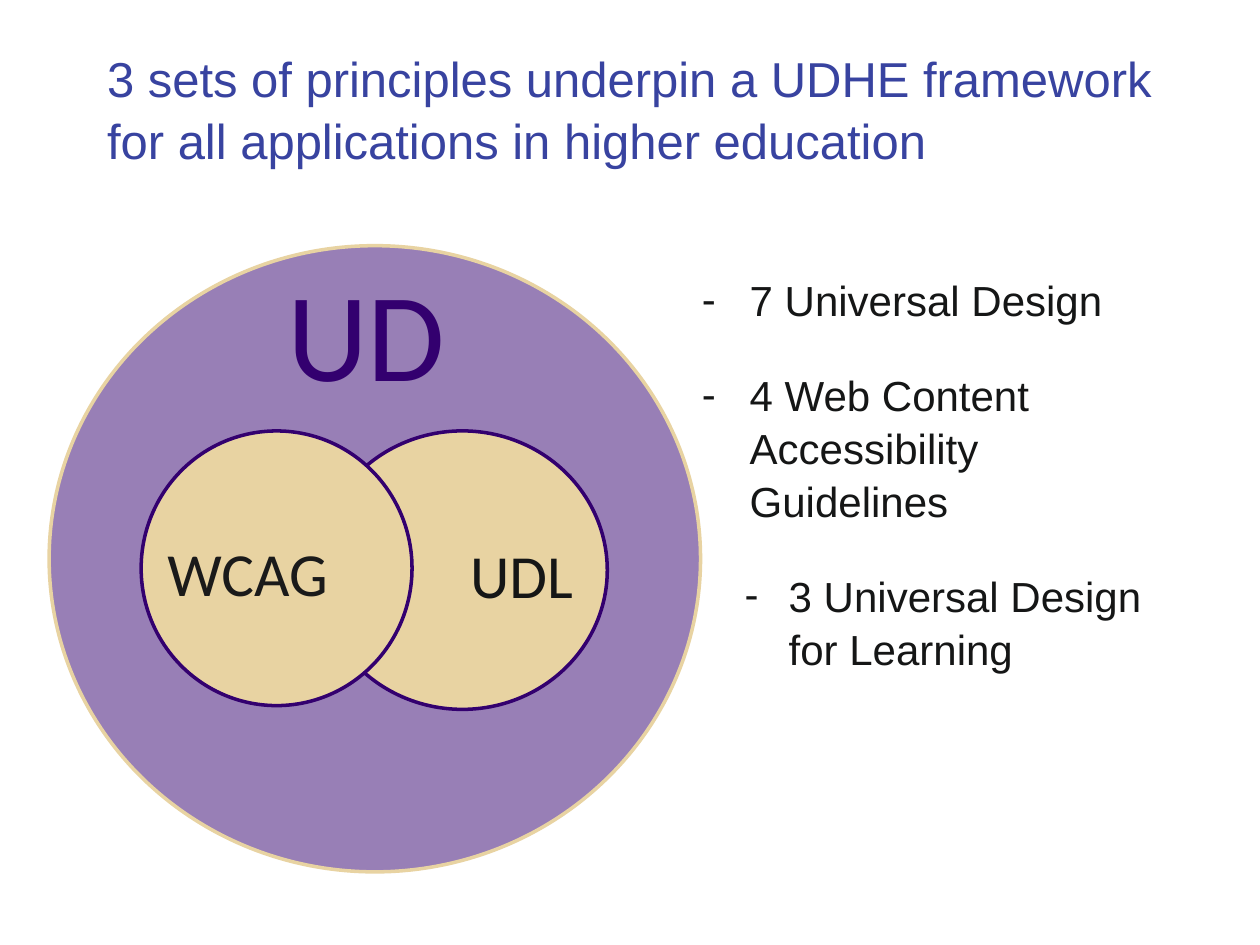
from lxml.etree import SubElement
from pptx import Presentation
from pptx.dml.color import RGBColor
from pptx.enum.shapes import MSO_SHAPE as Shape
from pptx.enum.text import MSO_ANCHOR as Anchor, MSO_AUTO_SIZE as AutoSize, PP_ALIGN as Align
from pptx.oxml.ns import qn
from pptx.util import Inches, Pt

PURPLE, GOLD, BLUE, BLACK = "33006F", "E8D3A2", "3843A0", "151616"

PRINCIPLES = [  # text, left margin, indent
    ("7 Universal Design", 0.4, -0.38),
    ("4 Web Content Accessibility \vGuidelines", 0.4, -0.38),
    ("3 Universal Design for Learning", 0.71, -0.35),
]


def rgb(color):
    return RGBColor.from_string(color)


def inches(box):
    return [Inches(length) for length in box]


def write(paragraph, text, size, font, color):
    """Add the text as runs, with a line break at each vertical tab."""
    for index, part in enumerate(text.split("\v")):
        if index:
            paragraph.add_line_break()
        run = paragraph.add_run()
        run.text = part
        run.font.size = Pt(size)
        run.font.name = font
        run.font.color.rgb = rgb(color)


def prepare_placeholder(placeholder, box):
    placeholder.left, placeholder.top, placeholder.width, placeholder.height = inches(box)
    frame = placeholder.text_frame
    frame.word_wrap = True
    frame.auto_size = AutoSize.NONE
    frame.vertical_anchor = Anchor.TOP
    return frame


def fill_title(placeholder, text):
    paragraph = prepare_placeholder(placeholder, (0.75, 0.31, 8.86, 1.25)).paragraphs[0]
    paragraph.alignment = Align.LEFT
    paragraph.line_spacing = 1.05
    write(paragraph, text, 28, "Arial", BLUE)


def set_dash(paragraph, margin, indent):
    properties = paragraph._p.get_or_add_pPr()
    properties.set("marL", str(Inches(margin)))
    properties.set("indent", str(Inches(indent)))
    SubElement(properties, qn("a:buChar"), char="-")


def fill_list(placeholder, items):
    frame = prepare_placeholder(placeholder, (5.45, 2.11, 4.16, 2.03))
    for index, (text, margin, indent) in enumerate(items):
        paragraph = frame.add_paragraph() if index else frame.paragraphs[0]
        set_dash(paragraph, margin, indent)
        paragraph.line_spacing = 1.05
        paragraph.space_before = Pt(24 if index else 0)
        write(paragraph, text, 24, "Arial", BLACK)


def add_circle(shapes, box, fill, line, opacity=100):
    circle = shapes.add_shape(Shape.OVAL, *inches(box))
    circle.shadow.inherit = False
    circle.fill.solid()
    circle.fill.fore_color.rgb = rgb(fill)
    if opacity < 100:
        color = circle.fill._xPr.find(qn("a:solidFill"))[0]
        SubElement(color, qn("a:alpha"), val=str(opacity * 1000))
    circle.line.color.rgb = rgb(line)
    circle.line.width = Pt(2)


def add_circle_label(shapes, box, text, color, left_inset=0):
    frame = shapes.add_textbox(*inches(box)).text_frame
    frame.word_wrap = True
    frame.vertical_anchor = Anchor.MIDDLE
    frame.margin_left = Inches(left_inset)
    frame.margin_top = frame.margin_right = frame.margin_bottom = 0
    paragraph = frame.paragraphs[0]
    paragraph.alignment = Align.CENTER
    paragraph.line_spacing = 0.9
    write(paragraph, text, 35, "Calibri", color)


def add_heading(shapes, box, text):
    frame = shapes.add_textbox(*inches(box)).text_frame
    frame.word_wrap = True
    write(frame.paragraphs[0], text, 72, "Calibri", PURPLE)


def add_venn_diagram(slide):
    shapes = slide.shapes.add_group_shape().shapes
    add_circle(shapes, (0.39, 1.95, 5.17, 4.97), PURPLE, GOLD, opacity=50)
    add_circle(shapes, (2.52, 3.42, 2.3, 2.21), GOLD, PURPLE)
    add_circle_label(shapes, (3.23, 3.99, 1.38, 1.21), "UDL", BLACK, left_inset=0.44)
    add_circle(shapes, (1.12, 3.42, 2.15, 2.18), GOLD, PURPLE)
    add_circle_label(shapes, (1.32, 3.98, 1.29, 1.2), "WCAG", "1A1A1A")


def main():
    presentation = Presentation()
    presentation.slide_width, presentation.slide_height = Inches(10), Inches(7.5)
    slide = presentation.slides.add_slide(presentation.slide_layouts[1])
    fill_title(
        slide.shapes.title,
        "3 sets of principles underpin a UDHE framework for all applications in higher education",
    )
    fill_list(slide.placeholders[1], PRINCIPLES)
    add_venn_diagram(slide)
    add_heading(slide.shapes, (2.18, 1.98, 1.47, 1.31), "UD")
    presentation.save("out.pptx")


if __name__ == "__main__":
    main()
